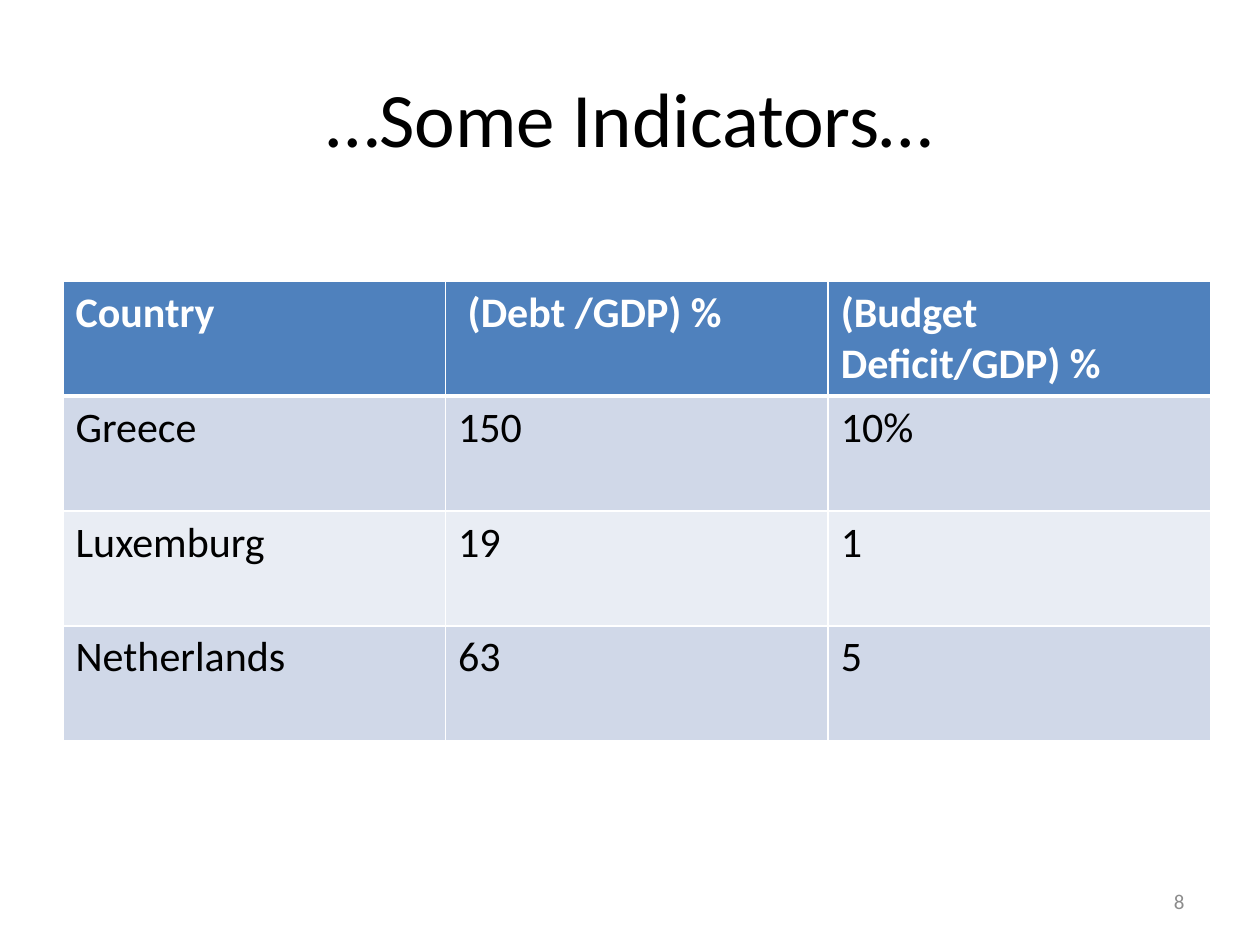
import pptx
import pptx.util
import pptx.dml.color
import pptx.enum.text
import pptx.oxml.ns
import lxml.etree
from dataclasses import dataclass

Inches, Pt = pptx.util.Inches, pptx.util.Pt
ALIGN = pptx.enum.text.PP_ALIGN

# Content
TITLE = "…Some Indicators…"
PAGE_NUMBER = "8"
ROWS = [
    ("Country", " (Debt /GDP) %", "(Budget Deficit/GDP) %"),
    ("Greece", "150", "10%"),
    ("Luxemburg", "19", "1"),
    ("Netherlands", "63", "5"),
]


@dataclass(frozen=True)
class Theme:
    font: str = "Calibri"
    title_size: int = 44
    table_size: int = 24
    number_size: int = 12
    text: str = "000000"
    muted: str = "8C8C8C"
    white: str = "FFFFFF"
    header: str = "4F81BD"
    bands: tuple = ("D0D8E8", "E9EDF4")
    rule: int = 1
    header_rule: int = 3


THEME = Theme()


def rgb(value):
    return pptx.dml.color.RGBColor.from_string(value)


def write(tf, text, size, color, align=ALIGN.LEFT, bold=False):
    tf.text = text
    p = tf.paragraphs[0]
    p.alignment = align
    font = p.runs[0].font
    font.name, font.size, font.bold = THEME.font, Pt(size), bold
    font.color.rgb = rgb(color)


def add_text(s, box, text, size, color, align):
    tf = s.shapes.add_textbox(*map(Inches, box)).text_frame
    tf.word_wrap = True
    tf.vertical_anchor = pptx.enum.text.MSO_ANCHOR.MIDDLE
    write(tf, text, size, color, align)


def set_borders(cell, widths):
    qn = pptx.oxml.ns.qn
    tcPr = cell._tc.get_or_add_tcPr()
    for side, width in widths.items():
        line = lxml.etree.SubElement(tcPr, qn(f"a:ln{side}"), w=str(Pt(width)))
        fill = lxml.etree.SubElement(line, qn("a:solidFill"))
        lxml.etree.SubElement(fill, qn("a:srgbClr"), val=THEME.white)


def add_indicator_table(s, left, top, width, height):
    n_rows, n_cols = len(ROWS), len(ROWS[0])
    table = s.shapes.add_table(
        n_rows, n_cols, *map(Inches, (left, top, width, height))).table
    for i, row in enumerate(ROWS):
        table.rows[i].height = Inches(height / n_rows)
        is_header = i == 0
        fill = THEME.header if is_header else THEME.bands[(i - 1) % 2]
        color = THEME.white if is_header else THEME.text
        widths = dict.fromkeys("LRTB", THEME.rule)
        if is_header:
            widths["B"] = THEME.header_rule
        elif i == 1:
            widths["T"] = THEME.header_rule
        for j, text in enumerate(row):
            cell = table.cell(i, j)
            write(cell.text_frame, text, THEME.table_size, color, bold=is_header)
            set_borders(cell, widths)
            cell.fill.solid()
            cell.fill.fore_color.rgb = rgb(fill)


def main():
    prs = pptx.Presentation()
    prs.slide_width, prs.slide_height = Inches(10), Inches(7.5)
    s = prs.slides.add_slide(prs.slide_layouts[6])

    # Title
    add_text(s, (0.5, 0.3, 9, 1.25), TITLE, THEME.title_size, THEME.text,
             ALIGN.CENTER)
    # Indicators by country
    add_indicator_table(s, 0.5, 2.23, 9.11, 3.65)
    # Slide number
    add_text(s, (7.17, 6.95, 2.33, 0.4), PAGE_NUMBER, THEME.number_size,
             THEME.muted, ALIGN.RIGHT)

    prs.save("out.pptx")


if __name__ == "__main__":
    main()
